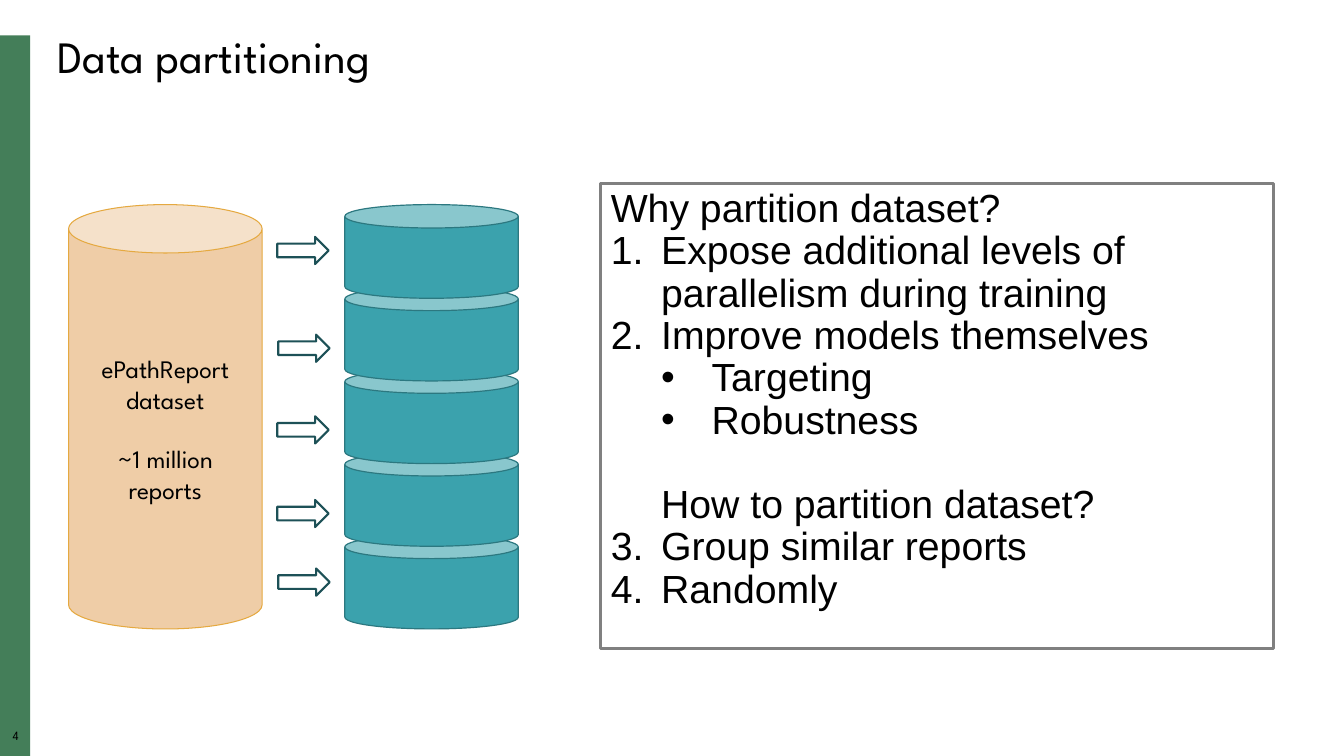
"""Build the "Data partitioning" slide: one dataset split into five parts."""
from lxml.etree import SubElement
from pptx import Presentation
from pptx.dml.color import RGBColor
from pptx.enum.shapes import MSO_SHAPE
from pptx.enum.text import MSO_ANCHOR, PP_ALIGN
from pptx.oxml.ns import qn
from pptx.util import Pt

PX = 9144
COLORS = {
    "text": "000000", "bar": "447E59", "frame": "808080",
    "dataset": "EFCDA7", "dataset_line": "E5A940",
    "part": "3BA2AD", "part_line": "2C7880",
    "arrow": "FFFFFF", "arrow_line": "1D5157",
}


def add_shape(kind, left, top, width, height, fill=None, line=None, weight=1):
    shape = page.shapes.add_shape(kind, left * PX, top * PX, width * PX, height * PX)
    shape.shadow.inherit = False
    if fill:
        shape.fill.solid()
        shape.fill.fore_color.rgb = RGBColor.from_string(COLORS[fill])
    else:
        shape.fill.background()
    if line:
        shape.line.color.rgb = RGBColor.from_string(COLORS[line])
        shape.line.width = Pt(weight)
    else:
        shape.line.fill.background()
    return shape


def add_text(box, text, size, font="League Spartan", align=PP_ALIGN.LEFT, spacing=0.9,
             before=0, margin=0, hanging=0, level=0, bullet=None, start=1):
    frame = box.text_frame
    frame.word_wrap = True
    para = frame.paragraphs[0]
    if para.runs:
        para = frame.add_paragraph()
    para.level = level
    para.alignment = align
    para.line_spacing = spacing
    if before:
        para.space_before = Pt(before)
    properties = para._p.get_or_add_pPr()
    properties.set("marL", str(margin * PX))
    properties.set("indent", str(-hanging * PX))
    if bullet == "number":
        SubElement(properties, qn("a:buFont"), typeface="+mj-lt")
        SubElement(properties, qn("a:buAutoNum"), type="arabicPeriod", startAt=str(start))
    elif bullet:
        SubElement(properties, qn("a:buFont"), typeface="Arial")
        SubElement(properties, qn("a:buChar"), char=bullet)
    span = para.add_run()
    span.text = text
    span.font.size = Pt(size)
    span.font.name = font
    span.font.color.rgb = RGBColor.from_string(COLORS["text"])


deck = Presentation()
deck.slide_width, deck.slide_height = 1333 * PX, 750 * PX
page = deck.slides.add_slide(deck.slide_layouts[6])

add_shape(MSO_SHAPE.RECTANGLE, 0, 35, 30, 715, "bar")
number = page.shapes.add_textbox(0, 724 * PX, 31 * PX, 17 * PX)
frame = number.text_frame
frame.margin_left = frame.margin_right = frame.margin_top = frame.margin_bottom = 0
add_text(number, "4", 9, align=PP_ALIGN.CENTER)

title = page.shapes.add_textbox(47 * PX, 30 * PX, 1250 * PX, 59 * PX)
add_text(title, "Data partitioning", 32)

for row in reversed(range(5)):
    add_shape(MSO_SHAPE.CAN, 342, 203 + 82 * row, 172, 93, "part", "part_line", 0.85)

dataset = add_shape(MSO_SHAPE.CAN, 68, 203, 192, 421, "dataset", "dataset_line", 0.75)
dataset.text_frame.vertical_anchor = MSO_ANCHOR.MIDDLE
for text, before in (("ePathReport dataset", 0), ("~1 million reports", 21)):
    add_text(dataset, text, 18, align=PP_ALIGN.CENTER, spacing=1.0, before=before)

for left, top in ((275, 235), (276, 332), (275, 413), (275, 496), (276, 564)):
    add_shape(MSO_SHAPE.RIGHT_ARROW, left, top, 51, 27, "arrow", "arrow_line", 1.5)

reasons = add_shape(MSO_SHAPE.RECTANGLE, 596, 182, 667, 461, line="frame", weight=2)
reasons.text_frame.vertical_anchor = MSO_ANCHOR.TOP
numbered = {"margin": 50, "hanging": 50, "bullet": "number"}
dotted = {"margin": 100, "hanging": 50, "level": 1, "bullet": "•"}
for text, layout in (
    ("Why partition dataset?", {}),
    ("Expose additional levels of parallelism during training", numbered),
    ("Improve models themselves", numbered),
    ("Targeting", dotted),
    ("Robustness", dotted),
    ("How to partition dataset?", {"margin": 50, "before": 30}),
    ("Group similar reports", {**numbered, "start": 3}),
    ("Randomly", {**numbered, "start": 3}),
):
    add_text(reasons, text, 28, font="Arial", **layout)

deck.save("out.pptx")
